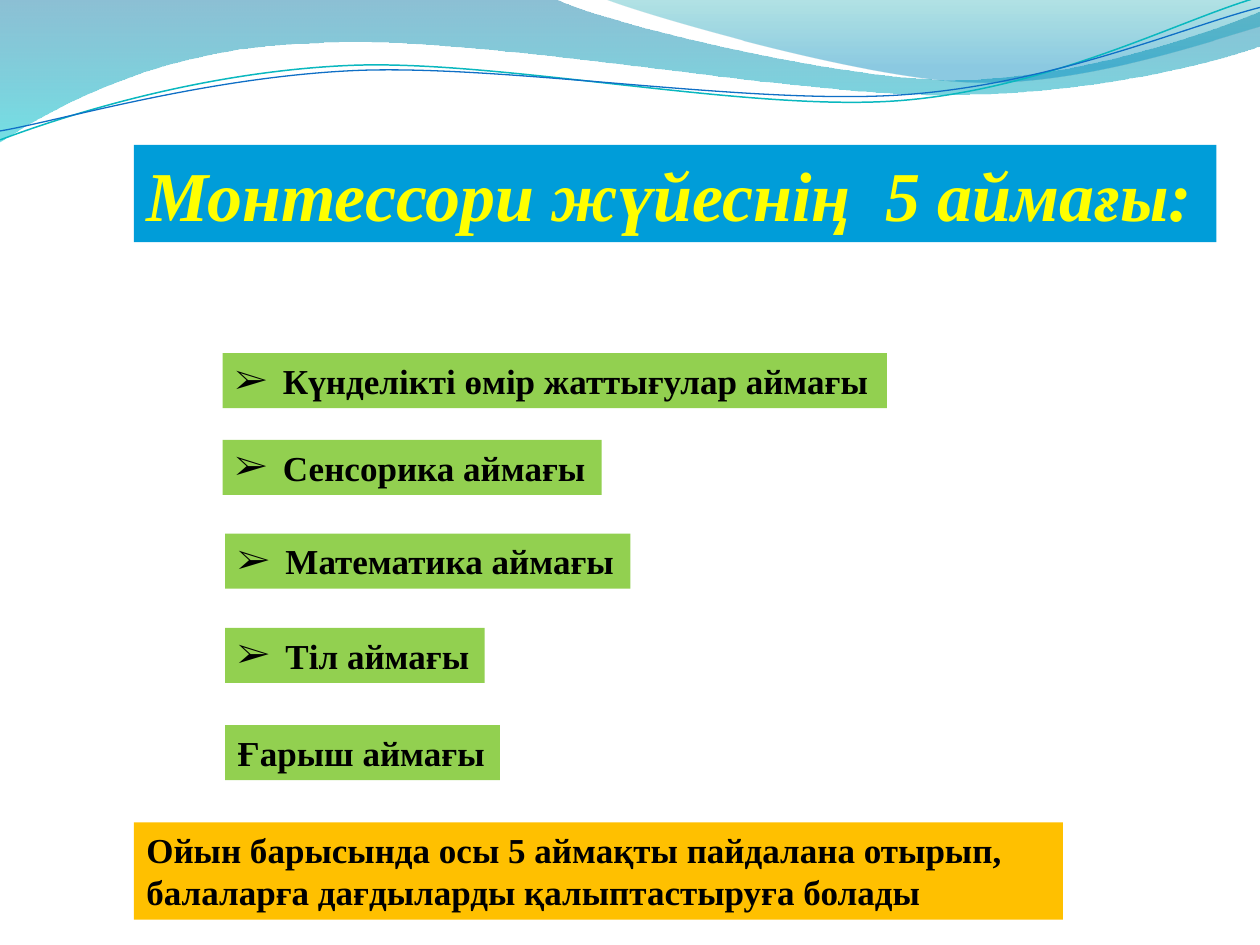
from dataclasses import dataclass
from math import cos, radians, sin
from pptx import Presentation
from pptx.dml.color import RGBColor
from pptx.enum.text import MSO_ANCHOR, MSO_AUTO_SIZE, PP_ALIGN
from pptx.oxml.ns import qn
from pptx.util import Cm, Pt
from lxml.etree import SubElement


@dataclass(frozen=True)
class Theme:
    font: str = "Times New Roman"
    title_size: int = 40
    text_size: int = 20
    title: str = "FFFF00"
    text: str = "000000"
    title_fill: str = "009DD9"
    area_fill: str = "92D050"
    note_fill: str = "FFC000"


THEME = Theme()

TITLE = ("Монтессори жүйеснің  5 аймағы:", (2.7, 2.92, 21.82, 1.96))
AREA_HEIGHT = 1.11
AREAS = [
    (" Күнделікті өмір жаттығулар аймағы", 4.49, 7.12, 13.39, "➢"),
    (" Сенсорика аймағы", 4.49, 8.87, 7.64, "➢"),
    (" Математика аймағы", 4.54, 10.76, 8.17, "➢"),
    (" Тіл аймағы", 4.54, 12.66, 5.23, "➢"),
    ("Ғарыш аймағы", 4.54, 14.62, 5.54, None),
]
NOTE = ("Ойын барысында осы 5 аймақты пайдалана отырып, "
        "балаларға дағдыларды қалыптастыруға болады", (2.7, 16.58, 18.73, 1.96))

BANDS = [
    ([[(0, 0)], [(11.18, -0.03)],
      [(12.09, 0.43), (16.87, 1.6), (19.25, 1.6)],
      [(21.67, 1.6), (24.33, 0.66), (25.4, 0.23)],
      [(25.43, 0.91)],
      [(24.97, 1.12), (22.1, 1.93), (18.95, 1.91)],
      [(15.8, 1.91), (9.7, 0.71), (6.53, 0.86)],
      [(3.28, 0.91), (1.17, 2.11), (-0.03, 2.87)],
      [(0, 0)]],
     [(0, "0074A1", 45), (1, "00C6CF", 55)]),
    ([[(12.17, -0.03)],
      [(12.93, 0.28), (17.32, 1.57), (19.53, 1.65)],
      [(21.74, 1.75), (24.41, 0.81), (25.4, 0.53)],
      [(25.4, 0)],
      [(12.17, -0.03)]],
     [(0, "00A1A9", 30), (0.8, "008BBF", 45)]),
]
WAVE_TILT = -2.7
WAVE_CENTER = (12.68, 1.47)
WAVES = [
    ([[(0, 2.82)],
      [(1.22, 2.36), (4.01, 1.45), (7.04, 1.32)],
      [(10.03, 1.19), (15.06, 2.26), (18.11, 2.03)],
      [(21.16, 1.8), (23.83, 0.38), (25.35, -0.05)]], "0AB8BF", 0.85),
    ([[(0, 2.64)],
      [(1.19, 2.44), (4.17, 1.55), (7.19, 1.42)],
      [(10.24, 1.3), (15.16, 2.13), (18.21, 1.91)],
      [(21.23, 1.7), (23.9, 0.53), (25.4, 0.15)]], "0F6FC6", 0.75),
]


def rgb(value):
    return RGBColor.from_string(value)


def turn(point, degrees):
    a = radians(degrees)
    dx, dy = (v - c for v, c in zip(point, WAVE_CENTER))
    return (WAVE_CENTER[0] + dx * cos(a) - dy * sin(a),
            WAVE_CENTER[1] + dx * sin(a) + dy * cos(a))


def add_outline(s, segments, close):
    segments = [[(Cm(x), Cm(y)) for x, y in seg] for seg in segments]
    ends = [seg[-1] for seg in segments]
    builder = s.shapes.build_freeform(*ends[0])
    builder.add_line_segments(ends[1:], close=close)
    sp = builder.convert_to_shape()
    sp.shadow.inherit = False
    left, top = (min(axis) for axis in zip(*ends))
    lines = list(sp._element.iter(qn("a:lnTo")))
    for line, seg in zip(lines, segments[1:]):
        if len(seg) == 3:
            curve = line.makeelement(qn("a:cubicBezTo"))
            for x, y in seg:
                SubElement(curve, qn("a:pt"), x=str(x - left), y=str(y - top))
            line.getparent().replace(line, curve)
    return sp


def add_band(s, segments, stops):
    sp = add_outline(s, segments, True)
    sp.line.fill.background()
    sp.fill.gradient()
    sp.fill.gradient_angle = 270
    for stop, (position, color, _) in zip(sp.fill.gradient_stops, stops):
        stop.position = position
        stop.color.rgb = rgb(color)
    for clr, (_, _, opacity) in zip(sp._element.spPr.iter(qn("a:srgbClr")), stops):
        SubElement(clr, qn("a:alpha"), val=str(opacity * 1000))


def add_wave(s, segments, color, width):
    level = [[turn(point, -WAVE_TILT) for point in seg] for seg in segments]
    sp = add_outline(s, level, False)
    sp.rotation = WAVE_TILT
    sp.fill.background()
    sp.line.color.rgb = rgb(color)
    sp.line.width = Pt(width)


def write(sp, text, box, fill, size=THEME.text_size, color=THEME.text, italic=False,
          wrap=False, bullet=None, fit=MSO_AUTO_SIZE.SHAPE_TO_FIT_TEXT):
    sp.left, sp.top, sp.width, sp.height = map(Cm, box)
    sp.fill.solid()
    sp.fill.fore_color.rgb = rgb(fill)
    tf = sp.text_frame
    tf.word_wrap = wrap
    tf.auto_size = fit
    tf.vertical_anchor = MSO_ANCHOR.TOP
    p = tf.paragraphs[0]
    p.alignment = PP_ALIGN.LEFT
    r = p.add_run()
    r.text = text
    r.font.name = THEME.font
    r.font.size = Pt(size)
    r.font.bold = True
    r.font.italic = italic
    r.font.color.rgb = rgb(color)
    if bullet:
        pPr = p._p.get_or_add_pPr()
        pPr.set("marL", str(Cm(0.79)))
        pPr.set("indent", str(Cm(-0.79)))
        SubElement(pPr, qn("a:buFont"), typeface=THEME.font)
        SubElement(pPr, qn("a:buChar"), char=bullet)


def add_box(s, text, box, fill, **fmt):
    write(s.shapes.add_textbox(*map(Cm, box)), text, box, fill, **fmt)


def main():
    prs = Presentation()
    prs.slide_width, prs.slide_height = Cm(25.4), Cm(19.05)
    s = prs.slides.add_slide(prs.slide_layouts[5])
    for segments, stops in BANDS:
        add_band(s, segments, stops)
    for segments, color, width in WAVES:
        add_wave(s, segments, color, width)
    write(s.shapes.title, *TITLE, THEME.title_fill, size=THEME.title_size,
          color=THEME.title, italic=True, fit=MSO_AUTO_SIZE.NONE)
    for text, left, top, width, bullet in AREAS:
        add_box(s, text, (left, top, width, AREA_HEIGHT), THEME.area_fill, bullet=bullet)
    add_box(s, *NOTE, THEME.note_fill, wrap=True)
    prs.save("out.pptx")


if __name__ == "__main__":
    main()
